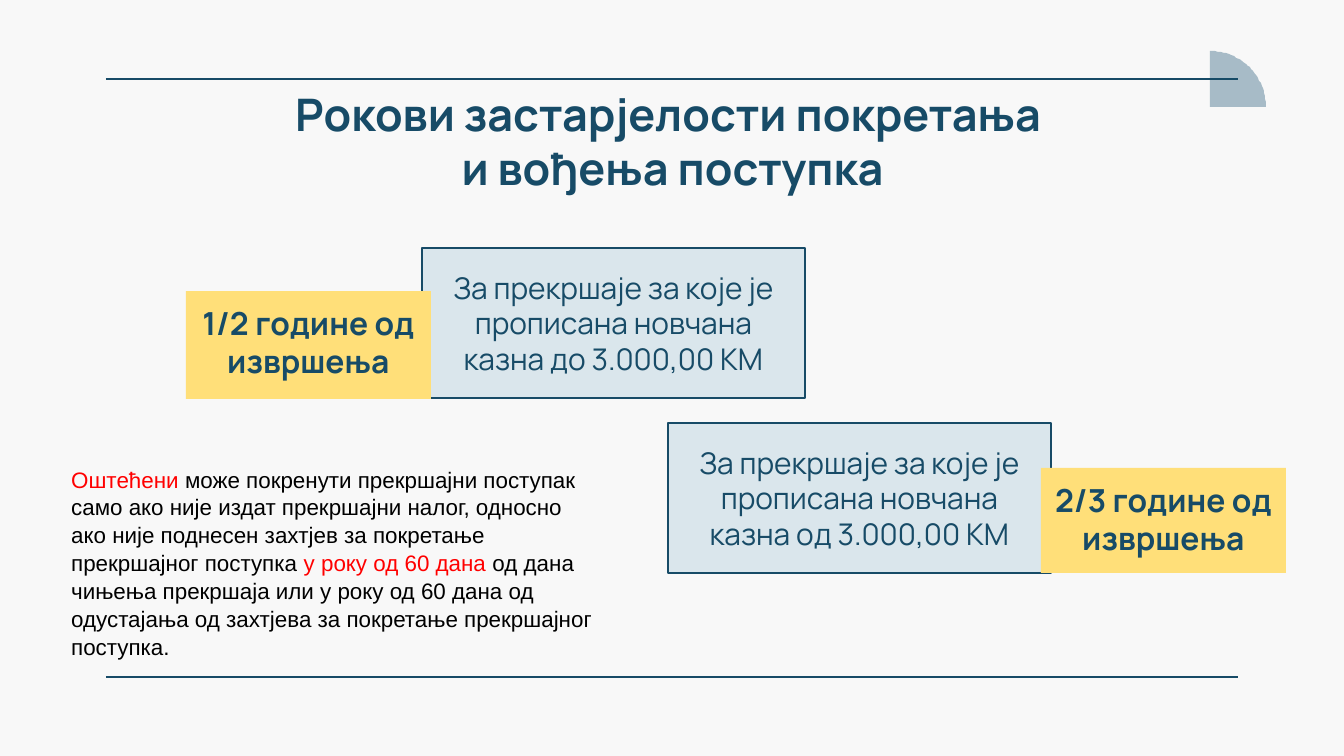
from math import cos, sin, pi
from lxml.etree import SubElement
from pptx import Presentation
from pptx.dml.color import RGBColor
from pptx.enum.shapes import MSO_CONNECTOR, MSO_SHAPE
from pptx.enum.text import MSO_ANCHOR, MSO_AUTO_SIZE, PP_ALIGN
from pptx.oxml.ns import qn
from pptx.util import Pt

PX = 9144000 / 1344
HUES = {"back": "F8F8F8", "navy": "174B67", "wedge": "A7BBC7", "pale": "DAE6EC",
        "gold": "FFDF79", "red": "FF0000", "black": "000000"}


def hue(name):
    return RGBColor.from_string(HUES[name])


def write(shape, text, size, bold, anchor):
    frame = shape.text_frame
    frame.word_wrap = True
    frame.auto_size = MSO_AUTO_SIZE.NONE
    frame.vertical_anchor = anchor
    frame.margin_left = frame.margin_right = round(13 * PX)
    frame.margin_top = frame.margin_bottom = round(13 * PX)
    frame.text = text
    para = frame.paragraphs[0]
    para.alignment = PP_ALIGN.CENTER
    para.line_spacing = 1.0
    para.font.name = "Manrope"
    para.font.size = Pt(size)
    para.font.bold = bold
    para.font.color.rgb = hue("navy")


deck = Presentation()
deck.slide_width, deck.slide_height = round(1344 * PX), round(756 * PX)
slide = deck.slides.add_slide(deck.slide_layouts[5])
slide.background.fill.solid()
slide.background.fill.fore_color.rgb = hue("back")
shapes = slide.shapes

steps = 32
turns = [pi / 2 * i / steps for i in range(steps + 1)]
arc = [(1210 + 56 * sin(t), 107 - 56 * cos(t)) for t in turns]
pen = shapes.build_freeform(1210, 107, scale=PX)
pen.add_line_segments(arc, close=True)
wedge = pen.convert_to_shape()
wedge.shadow.inherit = False
wedge.fill.solid()
wedge.fill.fore_color.rgb = hue("wedge")
wedge.line.fill.background()

for y in (79, 677):
    rule = shapes.add_connector(MSO_CONNECTOR.STRAIGHT, *(round(v * PX) for v in (106, y, 1238, y)))
    rule.line.color.rgb = hue("navy")
    rule.line.width = Pt(0.75)
    SubElement(rule._element.spPr, qn("a:effectLst"))

title = shapes.title
title.left, title.top, title.width, title.height = (round(v * PX) for v in (106, 74, 1133, 77))
write(title, "Рокови застарјелости покретања \vи вођења поступка", 24, True, MSO_ANCHOR.TOP)

fine = "За прекршаје за које је прописана новчана казна {} 3.000,00 КМ"
term = "{} године од извршења"
cards = [
    ((422, 248, 383, 150), fine.format("до"), "pale"),
    ((668, 423, 383, 150), fine.format("од"), "pale"),
    ((186, 291, 245, 108), term.format("1/2"), "gold"),
    ((1041, 468, 245, 105), term.format("2/3"), "gold"),
]
for place, text, tone in cards:
    card = shapes.add_shape(MSO_SHAPE.RECTANGLE, *(round(v * PX) for v in place))
    card.shadow.inherit = False
    card.fill.solid()
    card.fill.fore_color.rgb = hue(tone)
    if tone == "pale":
        card.line.color.rgb = hue("navy")
        card.line.width = Pt(0.75)
        write(card, text, 16, False, MSO_ANCHOR.MIDDLE)
    else:
        card.line.fill.background()
        write(card, text, 17, True, MSO_ANCHOR.TOP)

note = shapes.add_textbox(*(round(v * PX) for v in (58, 458, 556, 203)))
note.text_frame.word_wrap = True
note.text_frame.auto_size = MSO_AUTO_SIZE.SHAPE_TO_FIT_TEXT
para = note.text_frame.paragraphs[0]
para.line_spacing = 1.04
para.font.name = "Arial"
para.font.size = Pt(12)
parts = [
    ("Оштећени", "red"),
    (" може покренути прекршајни поступак само ако није издат прекршајни налог, "
     "односно ако није поднесен захтјев за покретање прекршајног поступка ", "black"),
    ("у року од 60 дана", "red"),
    (" од дана чињења прекршаја или у року од 60 дана од одустајања од захтјева "
     "за покретање прекршајног поступка.", "black"),
]
for text, tone in parts:
    run = para.add_run()
    run.text = text
    run.font.color.rgb = hue(tone)

deck.save("out.pptx")
